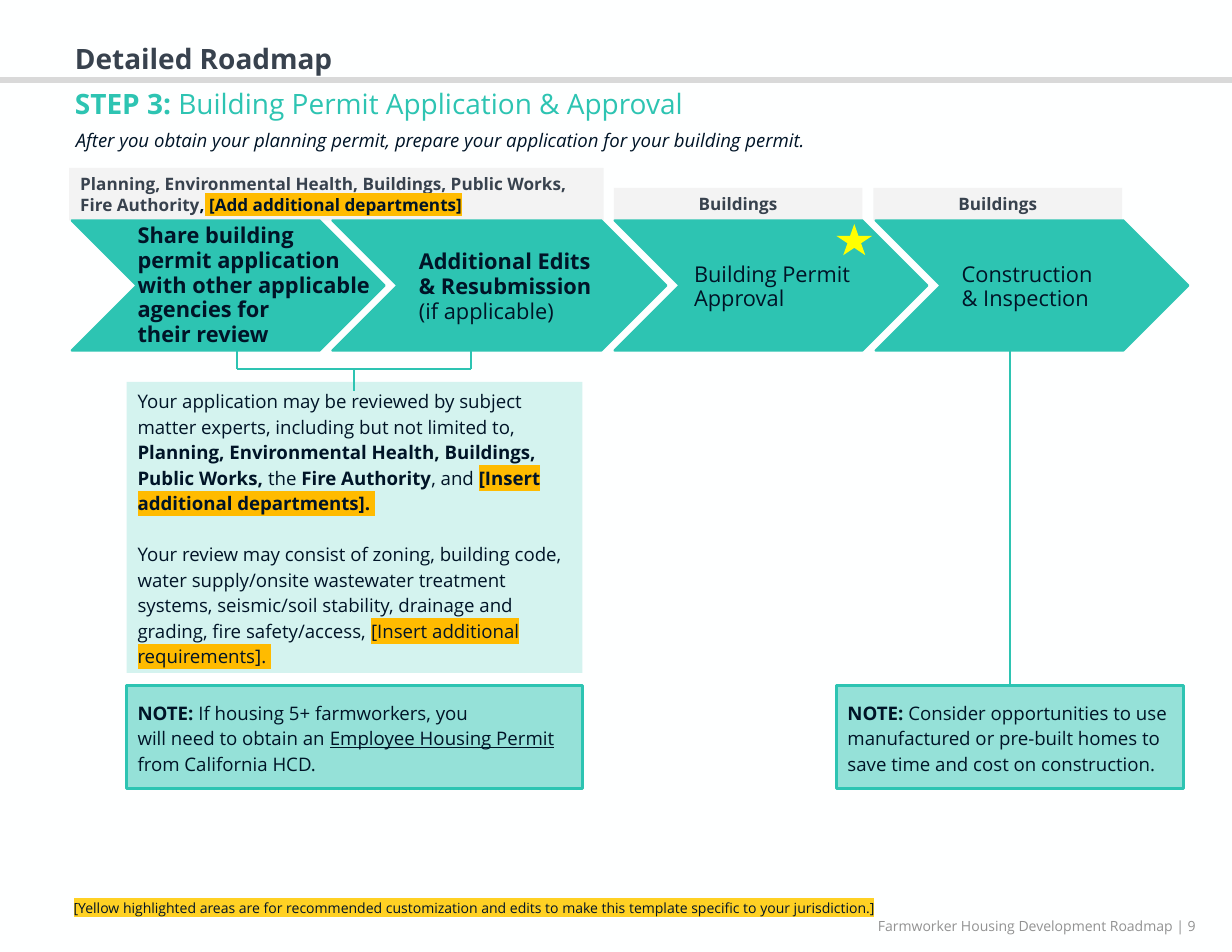
from lxml.etree import SubElement
from pptx import Presentation
from pptx.dml.color import RGBColor
from pptx.enum.shapes import MSO_CONNECTOR, MSO_SHAPE
from pptx.enum.text import MSO_ANCHOR, PP_ALIGN
from pptx.oxml.ns import qn
from pptx.util import Cm, Pt

THEME = {
    "font": "Open Sans", "bg": "FEFFFF", "ink": "001427", "slate": "38424E",
    "teal": "2DC4B2", "pale": "F3F3F3", "rule": "D9D9D9", "star": "FFFF00",
    "muted": "929292", "mark": "FFBB00", "hint": "FFD124",
    "title": 18, "step": 14, "body": 12, "label": 11, "small": 9,
}

# Run styles
PLAIN, BOLD = {}, {"bold": True}
MARK = {"mark": "mark"}
MARK_BOLD = {**BOLD, **MARK}
SLATE_BOLD = {**BOLD, "color": "slate"}

# A text is a list of paragraphs; a paragraph is a list of (words, style).
TITLE = [[("Detailed Roadmap\n", SLATE_BOLD),
          ("STEP 3: ", {**BOLD, "color": "teal"}),
          ("Building Permit Application & Approval", {"color": "teal"})]]
INTRO = [[("After you obtain your planning permit, prepare your application "
           "for your building permit.", {"italic": True})]]
HINT = [[("[Yellow highlighted areas are for recommended customization and edits "
          "to make this template specific to your jurisdiction.]", {"mark": "hint"})]]
FOOTER = [[("Farmworker Housing Development Roadmap | 9", {"color": "muted"})]]

BUILDINGS = [[("Buildings", SLATE_BOLD)]]
# left, width, height, text, alignment
DEPARTMENTS = [
    (1.57, 12.12, 1.19,
     [[("Planning, Environmental Health, Buildings, Public Works, Fire Authority", SLATE_BOLD),
       (",", BOLD), (" [Add additional departments]", MARK_BOLD)]], PP_ALIGN.LEFT),
    (13.92, 5.64, 0.74, BUILDINGS, PP_ALIGN.CENTER),
    (19.81, 5.64, 0.74, BUILDINGS, PP_ALIGN.CENTER),
]
# chevron left and width, text box, text
STEPS = [
    (1.63, 7.09, (2.87, 4.95, 5.99, 3.1),
     [[("Share building \npermit application with other applicable agencies for \n"
        "their review", BOLD)]]),
    (7.54, 7.57, (9.25, 5.54, 4.85, 1.96),
     [[("Additional Edits \n& Resubmission\n", BOLD), ("(if applicable)", PLAIN)]]),
    (13.94, 7.09, (15.49, 5.82, 4.42, 1.4), [[("Building Permit Approval", PLAIN)]]),
    (19.86, 7.09, (21.56, 5.82, 3.71, 1.4), [[("Construction & Inspection", PLAIN)]]),
]
REVIEW = [
    [("Your application may be reviewed by subject matter experts, including but "
      "not limited to, ", PLAIN),
     ("Planning, Environmental Health, Buildings, Public Works, ", BOLD),
     ("the ", PLAIN), ("Fire Authority", BOLD), (", and ", PLAIN),
     ("[Insert additional departments]. ", MARK_BOLD)],
    [("Your review may consist of zoning, building code, water supply/onsite "
      "wastewater treatment systems, seismic/soil stability, drainage and grading, "
      "fire safety/access, ", PLAIN),
     ("[Insert additional requirements]. ", MARK)],
]
# left, width, text
NOTES = [
    (2.87, 10.34,
     [[("NOTE: ", BOLD),
       ("If housing 5+ farmworkers, you \nwill need to obtain an ", PLAIN),
       ("Employee Housing Permit ", {"underline": True}),
       ("from California HCD.", PLAIN)]]),
    (18.97, 7.87,
     [[("NOTE: ", BOLD),
       ("Consider opportunities to use manufactured or pre-built homes to save time "
        "and cost on construction.", PLAIN)]]),
]

STEP_TOP, STEP_H = 5.0, 2.95
NOTE_TOP, NOTE_H = 15.54, 2.34
BRACKET_LEFT, BRACKET_RIGHT, BRACKET_TOP, BRACKET_Y, STEM_END = 5.38, 10.69, 7.4, 8.36, 8.86
INSPECTION_X = 22.91


def rgb(name):
    return RGBColor.from_string(THEME[name])


def highlight(r, name):
    """Mark a run; the highlight element has to follow the run's fill."""
    rPr = r.font._element
    hl = SubElement(rPr, qn("a:highlight"))
    SubElement(hl, qn("a:srgbClr"), val=THEME[name])
    rPr.find(qn("a:solidFill")).addnext(hl)


def write(sp, text, size, anchor=MSO_ANCHOR.TOP, **para):
    tf = sp.text_frame
    tf.word_wrap = True
    tf.vertical_anchor = anchor
    for i, runs in enumerate(text):
        p = tf.paragraphs[0] if i == 0 else tf.add_paragraph()
        for key, value in {"alignment": PP_ALIGN.LEFT, **para}.items():
            setattr(p, key, value)
        for words, style in runs:
            for j, line in enumerate(words.split("\n")):
                if j:
                    p.add_line_break()
                if not line:
                    continue
                r = p.add_run()
                r.text = line
                look = {"name": THEME["font"], "size": Pt(THEME[size]), "bold": False, **style}
                r.font.color.rgb = rgb(look.pop("color", "ink"))
                mark = look.pop("mark", None)
                for key, value in look.items():
                    setattr(r.font, key, value)
                if mark:
                    highlight(r, mark)


def add_text(s, box, text, size, **para):
    write(s.shapes.add_textbox(*map(Cm, box)), text, size, **para)


def add_block(s, kind, box, fill, line=None, opacity=None):
    sp = s.shapes.add_shape(kind, *map(Cm, box))
    sp.shadow.inherit = False
    sp.fill.solid()
    sp.fill.fore_color.rgb = rgb(fill)
    if opacity:
        clr = sp._element.spPr.find(qn("a:solidFill"))[0]
        SubElement(clr, qn("a:alpha"), val=str(opacity * 1000))
    if line:
        sp.line.color.rgb = rgb("teal")
        sp.line.width = Pt(line)
    else:
        sp.line.fill.background()
    return sp


def add_line(s, *ends):
    c = s.shapes.add_connector(MSO_CONNECTOR.STRAIGHT, *map(Cm, ends))
    c.line.color.rgb = rgb("teal")
    c.line.width = Pt(1.25)
    SubElement(c._element.spPr, qn("a:effectLst"))


def main():
    prs = Presentation()
    prs.slide_width, prs.slide_height = Cm(27.94), Cm(21.59)
    s = prs.slides.add_slide(prs.slide_layouts[6])
    s.background.fill.solid()
    s.background.fill.fore_color.rgb = rgb("bg")

    add_block(s, MSO_SHAPE.RECTANGLE, (0, 1.75, 27.94, 0.13), "rule")
    add_text(s, (1.45, 0.58, 23.06, 2.24), TITLE, "title", line_spacing=Pt(28.6))
    add_text(s, (1.47, 2.79, 24.59, 0.76), INTRO, "body")

    for left, width, height, text, align in DEPARTMENTS:
        sp = add_block(s, MSO_SHAPE.RECTANGLE, (left, STEP_TOP - height, width, height), "pale")
        write(sp, text, "label", alignment=align)
    for left, width, box, text in STEPS:
        add_block(s, MSO_SHAPE.CHEVRON, (left, STEP_TOP, width, STEP_H), "teal", line=1.5)
        add_text(s, box, text, "step", line_spacing=Pt(15.8))
    add_block(s, MSO_SHAPE.STAR_5_POINT, (18.97, 5.08, 0.81, 0.71), "star")

    middle = (BRACKET_LEFT + BRACKET_RIGHT) / 2
    for x in (BRACKET_LEFT, BRACKET_RIGHT):
        add_line(s, x, BRACKET_TOP, x, BRACKET_Y)
    add_line(s, BRACKET_LEFT, BRACKET_Y, BRACKET_RIGHT, BRACKET_Y)
    add_line(s, middle, BRACKET_Y, middle, STEM_END)
    add_line(s, INSPECTION_X, BRACKET_TOP, INSPECTION_X, NOTE_TOP)

    sp = add_block(s, MSO_SHAPE.RECTANGLE, (2.87, 8.66, 10.34, 6.6), "teal", opacity=20)
    write(sp, REVIEW, "body", MSO_ANCHOR.MIDDLE, line_spacing=Pt(16.4), space_after=Pt(16.4))
    sp.text_frame.paragraphs[-1].space_after = Pt(0)
    for left, width, text in NOTES:
        sp = add_block(s, MSO_SHAPE.RECTANGLE, (left, NOTE_TOP, width, NOTE_H), "teal",
                       line=2, opacity=50)
        write(sp, text, "body", MSO_ANCHOR.MIDDLE, line_spacing=Pt(16.4))

    add_text(s, (1.42, 20.27, 25.76, 0.64), HINT, "small")
    add_text(s, (19.66, 20.68, 8.23, 0.64), FOOTER, "small")
    prs.save("out.pptx")


if __name__ == "__main__":
    main()
